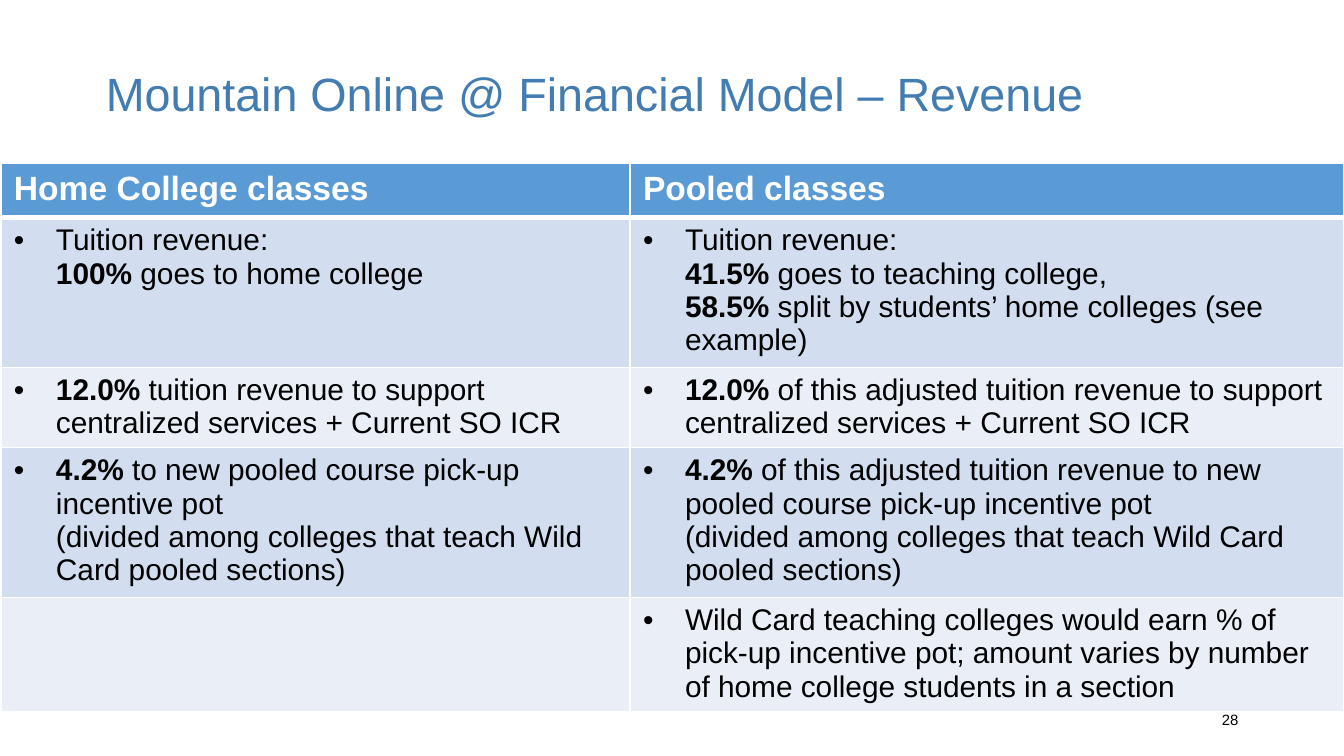
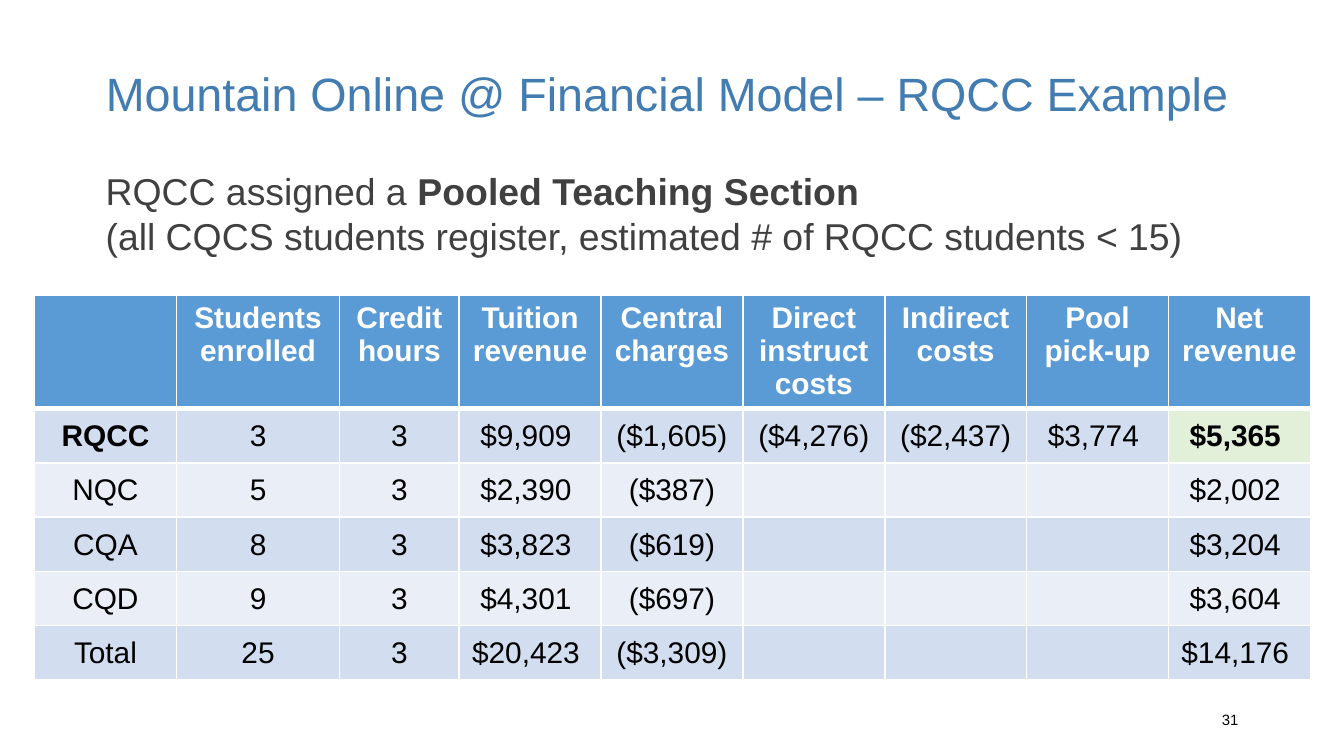
from copy import deepcopy
from dataclasses import dataclass, replace

from lxml.etree import SubElement
from pptx import Presentation
from pptx.dml.color import RGBColor
from pptx.enum.text import MSO_ANCHOR as Anchor, MSO_AUTO_SIZE as AutoSize, PP_ALIGN as Align
from pptx.oxml.ns import qn
from pptx.util import Emu, Pt

# Shared look: 144 px to the inch
EMU_PER_PX = 6350
TITLE_ONLY = 5
FONT = "Arial"
WHITE, BLACK, GREY, TITLE_BLUE = "FFFFFF", "000000", "404040", "427CB1"
HEADER_FILL, BAND_FILLS, HIGHLIGHT = "5B9BD5", ("D2DEEF", "EAEFF7"), "E2F0D9"
BULLET_INDENT = 45


@dataclass(frozen=True)
class Box:
    left: int
    top: int
    width: int
    height: int


@dataclass(frozen=True)
class TextStyle:
    size: int
    color: str
    bold: bool = False
    align: Align = Align.LEFT
    bullet: bool = False
    line_spacing: float | None = None
    space: int = 0


@dataclass(frozen=True)
class TableSpec:
    left: int
    top: int
    columns: list[int]
    row_heights: list[int]
    rows: list[list[str]]
    header: TextStyle
    body: TextStyle
    body_margins: tuple[int, int, int, int]
    body_anchor: Anchor


TITLE_BOX = Box(99, 43, 1241, 121)
NUMBER_BOX = Box(1017, 750, 324, 43)
INTRO_BOX = Box(99, 173, 1306, 556)
TITLE_STYLE = TextStyle(25, TITLE_BLUE, line_spacing=0.9)
NUMBER_STYLE = TextStyle(8, BLACK, align=Align.RIGHT)
INTRO_STYLE = TextStyle(20, GREY, space=6)
# Top-anchored text needs no bottom margin, which keeps the rows compact
TOP_MARGINS = (14, 7, 14, 0)

REVENUE_TABLE = TableSpec(
    left=1, top=175, columns=[674, 765], row_heights=[58, 156, 86, 156, 121],
    rows=[
        ["Home College classes", "Pooled classes"],
        ["Tuition revenue: \n**100%** goes to home college",
         "Tuition revenue: \n**41.5%** goes to teaching college, \n"
         "**58.5%** split by students’ home colleges (see example)"],
        ["**12.0%** tuition revenue to support centralized services + Current SO ICR",
         "**12.0%** of this adjusted tuition revenue to support "
         "centralized services + Current SO ICR"],
        ["**4.2%** to new pooled course pick-up incentive pot \n"
         "(divided among colleges that teach Wild Card pooled sections)",
         "**4.2%** of this adjusted tuition revenue to new pooled course pick-up incentive pot \n"
         "(divided among colleges that teach Wild Card pooled sections)"],
        ["",
         "Wild Card teaching colleges would earn % of pick-up incentive pot; "
         "amount varies by number of home college students in a section"],
    ],
    header=TextStyle(18, WHITE, bold=True),
    body=TextStyle(16, BLACK, bullet=True),
    body_margins=TOP_MARGINS, body_anchor=Anchor.TOP,
)

EXAMPLE_TABLE = TableSpec(
    left=37, top=316, columns=[152, 175, 128] + [152] * 6, row_heights=[120] + [58] * 5,
    rows=[
        ["", "Students enrolled", "Credit hours", "Tuition revenue", "Central charges",
         "Direct instruct costs", "Indirect costs", "Pool pick-up", "Net revenue"],
        ["**RQCC**", "3", "3", "$9,909 ", "($1,605)", "($4,276)", "($2,437)", "$3,774 ",
         "**$5,365 **"],
        ["NQC", "5", "3", "$2,390 ", "($387)", "", "", "", "$2,002 "],
        ["CQA", "8", "3", "$3,823 ", "($619)", "", "", "", "$3,204 "],
        ["CQD", "9", "3", "$4,301 ", "($697)", "", "", "", "$3,604 "],
        ["Total", "25", "3", "$20,423 ", "($3,309)", "", "", "", "$14,176 "],
    ],
    header=TextStyle(16, WHITE, bold=True, align=Align.CENTER),
    body=TextStyle(16, BLACK, align=Align.CENTER),
    body_margins=(1, 1, 1, 0), body_anchor=Anchor.MIDDLE,
)


def px(length: int) -> Emu:
    return Emu(length * EMU_PER_PX)


def rgb(color: str) -> RGBColor:
    return RGBColor.from_string(color)


# Text
def set_font(font, style: TextStyle) -> None:
    font.name, font.size, font.bold = FONT, Pt(style.size), style.bold
    font.color.rgb = rgb(style.color)


def add_bullet(paragraph) -> None:
    properties = paragraph._p.get_or_add_pPr()
    properties.set("marL", str(px(BULLET_INDENT)))
    properties.set("indent", str(-px(BULLET_INDENT)))
    bullet_font = SubElement(properties, qn("a:buFont"), typeface=FONT)
    bullet = SubElement(properties, qn("a:buChar"), char="•")
    default_font = properties.find(qn("a:defRPr"))
    if default_font is not None:
        default_font.addprevious(bullet_font)
        default_font.addprevious(bullet)


def write(text_frame, text: str, style: TextStyle) -> None:
    """Fill the frame; ** toggles bold and a newline breaks the line."""
    paragraph = text_frame.paragraphs[0]
    paragraph.alignment = style.align
    paragraph.line_spacing = style.line_spacing
    paragraph.space_before = paragraph.space_after = Pt(style.space)
    set_font(paragraph.font, style)
    if style.bullet:
        add_bullet(paragraph)
    for part_index, part in enumerate(text.split("**")):
        part_style = replace(style, bold=style.bold or part_index % 2 == 1)
        for line_index, line in enumerate(part.split("\n")):
            if line_index:
                paragraph.add_line_break()
            if line:
                run = paragraph.add_run()
                run.text = line
                set_font(run.font, part_style)
    # Line breaks and the paragraph end take the text format too
    run_format = paragraph.runs[0].font._element
    for line_break in paragraph._p.findall(qn("a:br")):
        line_break.append(deepcopy(run_format))
    end_format = deepcopy(run_format)
    end_format.tag = qn("a:endParaRPr")
    paragraph._p.append(end_format)


def place(shape, box: Box) -> None:
    shape.left, shape.top = px(box.left), px(box.top)
    shape.width, shape.height = px(box.width), px(box.height)


def add_text(slide, box: Box, text: str, style: TextStyle, anchor: Anchor) -> None:
    shape = slide.shapes.add_textbox(0, 0, 0, 0)
    place(shape, box)
    shape.text_frame.word_wrap = True
    shape.text_frame.vertical_anchor = anchor
    write(shape.text_frame, text, style)


# Tables
def set_borders(cell, row_index: int) -> None:
    properties = cell._tc.get_or_add_tcPr()
    widths = {
        "L": 1,
        "R": 1,
        "T": 3 if row_index == 1 else 1,
        "B": 3 if row_index == 0 else 1,
    }
    for side, width in widths.items():
        line = SubElement(properties, qn(f"a:ln{side}"), w=str(Pt(width)))
        fill = SubElement(line, qn("a:solidFill"))
        SubElement(fill, qn("a:srgbClr"), val=WHITE)


def set_fill(cell, color: str) -> None:
    cell.fill.solid()
    cell.fill.fore_color.rgb = rgb(color)


def add_table(slide, spec: TableSpec):
    table = slide.shapes.add_table(
        len(spec.rows), len(spec.columns), px(spec.left), px(spec.top),
        px(sum(spec.columns)), px(sum(spec.row_heights)),
    ).table
    for column, width in zip(table.columns, spec.columns):
        column.width = px(width)
    for row_index, (row, height) in enumerate(zip(table.rows, spec.row_heights)):
        row.height = px(height)
        is_header = row_index == 0
        for cell, text in zip(row.cells, spec.rows[row_index]):
            margins = TOP_MARGINS if is_header else spec.body_margins
            (cell.margin_left, cell.margin_top,
             cell.margin_right, cell.margin_bottom) = map(px, margins)
            cell.vertical_anchor = Anchor.TOP if is_header else spec.body_anchor
            set_borders(cell, row_index)
            set_fill(cell, HEADER_FILL if is_header else BAND_FILLS[(row_index - 1) % 2])
            if text:
                write(cell.text_frame, text, spec.header if is_header else spec.body)
    return table


# Slides
def add_slide(presentation, topic: str, number: int):
    slide = presentation.slides.add_slide(presentation.slide_layouts[TITLE_ONLY])
    title = slide.shapes.title
    place(title, TITLE_BOX)
    title.text_frame.auto_size = AutoSize.NONE
    title.text_frame.vertical_anchor = Anchor.MIDDLE
    write(title.text_frame, f"Mountain Online @ Financial Model – {topic}", TITLE_STYLE)
    add_text(slide, NUMBER_BOX, str(number), NUMBER_STYLE, Anchor.MIDDLE)
    return slide


def main() -> None:
    presentation = Presentation()
    presentation.slide_width, presentation.slide_height = px(1440), px(810)

    # Revenue rules
    revenue_slide = add_slide(presentation, "Revenue", 28)
    add_table(revenue_slide, REVENUE_TABLE)

    # Worked example
    example_slide = add_slide(presentation, "RQCC Example", 31)
    intro = ("RQCC assigned a **Pooled Teaching Section**\n"
             "(all CQCS students register, estimated # of RQCC students < 15)")
    add_text(example_slide, INTRO_BOX, intro, INTRO_STYLE, Anchor.TOP)
    example_table = add_table(example_slide, EXAMPLE_TABLE)
    net_revenue_column = len(EXAMPLE_TABLE.columns) - 1
    set_fill(example_table.cell(1, net_revenue_column), HIGHLIGHT)

    presentation.save("out.pptx")


if __name__ == "__main__":
    main()
